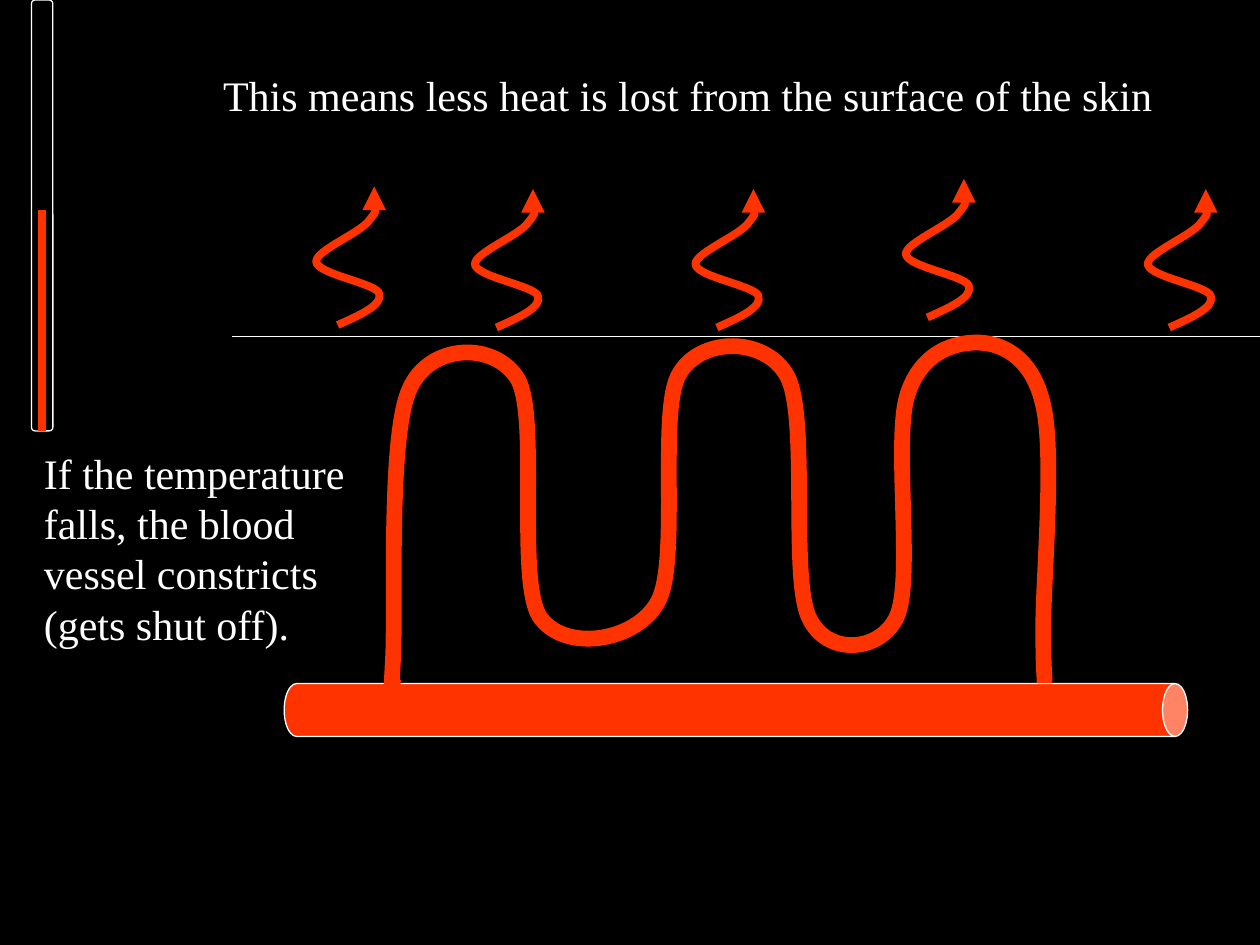
import pptx
import pptx.util
import pptx.dml.color
import pptx.enum.shapes
import pptx.enum.text
import pptx.oxml
import pptx.oxml.ns

HUES = {"back": "000000", "blood": "FF3300", "ink": "FFFFFF"}
FONT = "Times New Roman"
WIDE, HIGH = 10, 7.5

HEAD = ("This means less heat is lost from the surface of the skin", (1.67, 0.5, 8, 0.5))
NOTE = ("If the temperature falls, the blood vessel constricts (gets shut off).",
        (0.25, 3.5, 2.75, 1.7))

LINES = [
    ((1.84, 2.67), (WIDE, 2.67), "ink", 0.75),
    ((0.33, 2.58), (0.33, 3.42), "blood", 4.5),
    ((0.33, 1.67), (0.33, 2.6), "blood", 4.5),
]

VESSEL = [
    (3.12, 5.39),
    (3.1, 5.53), (3.1, 5.6), (3.12, 5.22),
    (3.14, 4.84), (3.08, 3.46), (3.25, 3.09),
    (3.41, 2.72), (3.93, 2.71), (4.11, 3.01),
    (4.28, 3.31), (4.1, 4.59), (4.28, 4.89),
    (4.47, 5.18), (5.04, 5.1), (5.22, 4.78),
    (5.4, 4.46), (5.22, 3.26), (5.39, 2.97),
    (5.56, 2.67), (6.08, 2.67), (6.25, 2.99),
    (6.42, 3.32), (6.27, 4.58), (6.42, 4.9),
    (6.56, 5.21), (6.99, 5.18), (7.12, 4.89),
    (7.25, 4.59), (7.09, 3.5), (7.2, 3.14),
    (7.31, 2.78), (7.6, 2.71), (7.78, 2.72),
    (7.97, 2.73), (8.2, 2.85), (8.28, 3.22),
    (8.37, 3.6), (8.28, 4.6), (8.28, 4.97),
    (8.28, 5.34), (8.29, 5.32), (8.29, 5.42),
]

WAVE = [
    (0, 0),
    (0.18, -0.08), (0.36, -0.16), (0.33, -0.25),
    (0.31, -0.33), (-0.15, -0.4), (-0.17, -0.5),
    (-0.18, -0.59), (0.18, -0.73), (0.25, -0.83),
    (0.33, -0.93), (0.28, -1.04), (0.29, -1.1),
]
STARTS = [(2.68, 2.58), (3.94, 2.6), (5.69, 2.6), (7.36, 2.52), (9.28, 2.6)]

inch = pptx.util.Inches


def hue(name):
    return pptx.dml.color.RGBColor.from_string(HUES[name])


def node(tag, rest=""):
    return pptx.oxml.parse_xml(
        f'<a:{tag} {pptx.oxml.ns.nsdecls("a")} {rest}/>')


def stroke(shape, name, width):
    shape.line.color.rgb = hue(name)
    shape.line.width = pptx.util.Pt(width)


def body(slide, kind, box, fill=None):
    shape = slide.shapes.add_shape(kind, *map(inch, box))
    shape.shadow.inherit = False
    if fill:
        shape.fill.solid()
        shape.fill.fore_color.rgb = hue(fill)
    else:
        shape.fill.background()
    stroke(shape, "ink", 0.75)
    return shape


def rule(slide, start, end, name, width):
    line = slide.shapes.add_connector(
        pptx.enum.shapes.MSO_CONNECTOR.STRAIGHT, *map(inch, start + end))
    stroke(line, name, width)
    line._element.spPr.append(node("effectLst"))


def bend(shape):
    track = next(shape._element.iter(pptx.oxml.ns.qn("a:path")))
    legs = track.findall(pptx.oxml.ns.qn("a:lnTo"))
    for k in range(0, len(legs), 3):
        arc = node("cubicBezTo")
        for leg in legs[k:k + 3]:
            arc.append(leg[0])
            track.remove(leg)
        track.append(arc)


def curve(slide, knots, width, arrow=False):
    dots = [tuple(map(inch, knot)) for knot in knots]
    pen = slide.shapes.build_freeform(*dots[0])
    pen.add_line_segments(dots[1:], close=False)
    shape = pen.convert_to_shape()
    bend(shape)
    shape.shadow.inherit = False
    shape.fill.background()
    stroke(shape, "blood", width)
    if arrow:
        shape.line._get_or_add_ln().append(node("tailEnd", 'type="triangle"'))


def write(shape, text, box):
    shape.left, shape.top, shape.width, shape.height = map(inch, box)
    frame = shape.text_frame
    frame.text = text
    frame.word_wrap = True
    frame.auto_size = pptx.enum.text.MSO_AUTO_SIZE.SHAPE_TO_FIT_TEXT
    frame.vertical_anchor = pptx.enum.text.MSO_ANCHOR.TOP
    para = frame.paragraphs[0]
    para.alignment = pptx.enum.text.PP_ALIGN.LEFT
    font = para.runs[0].font
    font.name = FONT
    font.size = pptx.util.Pt(24)
    font.color.rgb = hue("ink")


def main():
    deck = pptx.Presentation()
    deck.slide_width, deck.slide_height = inch(WIDE), inch(HIGH)
    slide = deck.slides.add_slide(deck.slide_layouts[5])
    slide.background.fill.solid()
    slide.background.fill.fore_color.rgb = hue("back")

    kinds = pptx.enum.shapes.MSO_SHAPE
    tube = body(slide, kinds.CAN, (5.63, 2.05, 0.42, 7.17), "blood")
    tube.rotation = 90
    tube.adjustments[0] = 0.474
    body(slide, kinds.ROUNDED_RECTANGLE, (0.25, 0, 0.17, 3.42))
    for line in LINES:
        rule(slide, *line)

    curve(slide, VESSEL, 9)
    for x, y in STARTS:
        curve(slide, [(x + dx, y + dy) for dx, dy in WAVE], 4.5, arrow=True)

    write(slide.shapes.title, *HEAD)
    write(slide.shapes.add_textbox(0, 0, 0, 0), *NOTE)
    deck.save("out.pptx")


if __name__ == "__main__":
    main()
